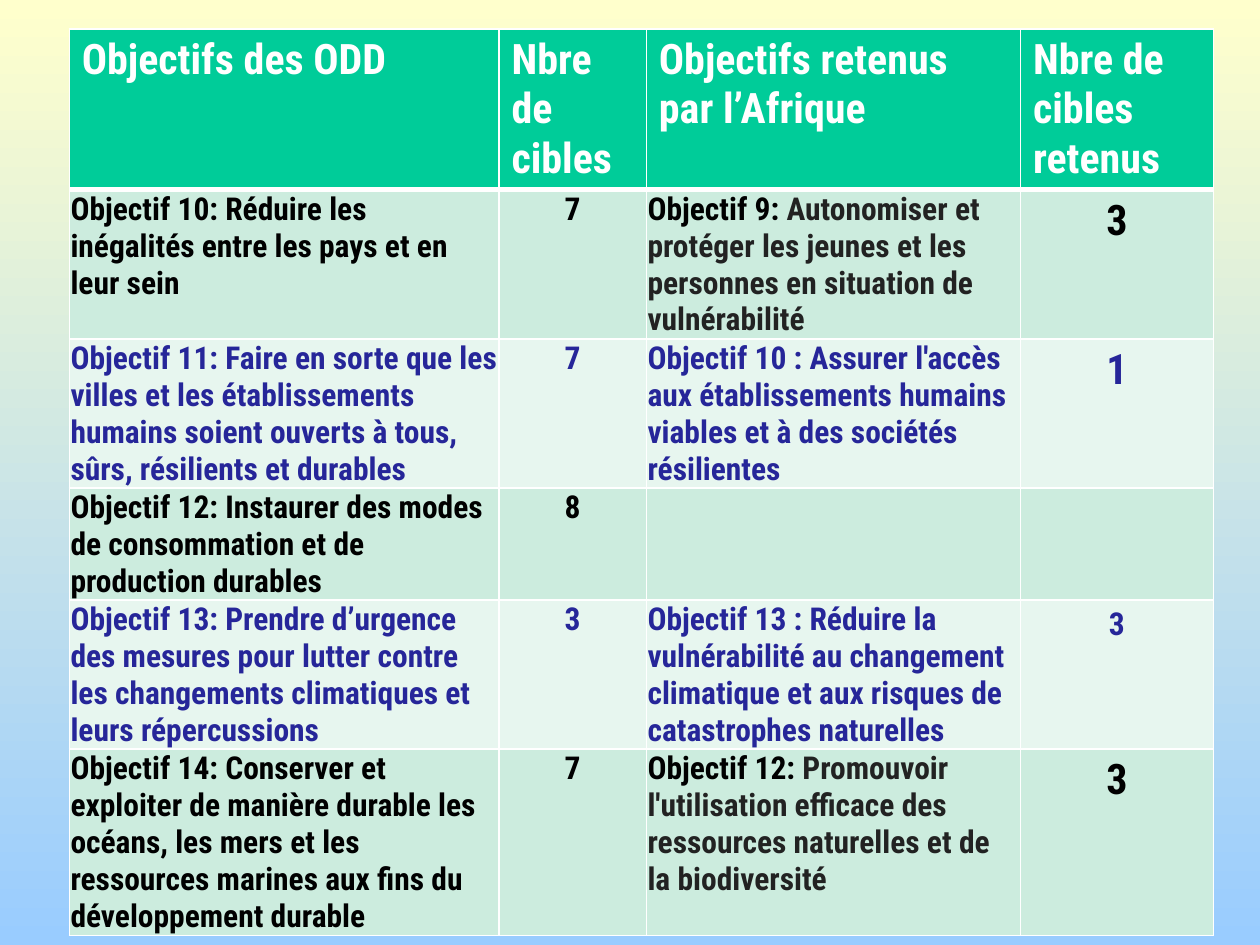
from pptx import Presentation
from pptx.dml.color import RGBColor
from pptx.enum.text import PP_ALIGN
from pptx.oxml.ns import qn
from pptx.util import Inches, Pt
from lxml.etree import SubElement

FONT = "Roboto Condensed"
WHITE, BLACK, GREY, BLUE = "FFFFFF", "000000", "222222", "262699"
HEADER_FILL, DARK_BAND, LIGHT_BAND = "00CC99", "CCECDE", "E7F6EF"
COLUMN_WIDTHS = [3.41, 1.17, 2.97, 1.53]
ROW_HEIGHT = 0.41  # minimum; rows grow with their text
THIN, THICK = 1, 3
TIGHT = {"margin_left": 0.01, "margin_top": 0.01, "margin_right": 0.01, "margin_bottom": 0}

HEADERS = ["Objectifs des ODD", "Nbre de cibles",
           "Objectifs retenus par l’Afrique", "Nbre de cibles retenus"]

# Goal, targets, (African goal label, wording), targets kept, size of the last number
GOALS = [
    ("Objectif 10: Réduire les inégalités entre les pays et en leur sein", "7",
     ("Objectif 9:", " Autonomiser et protéger les jeunes et les personnes "
      "en situation de vulnérabilité"), "3", 24),
    ("Objectif 11: Faire en sorte que les villes et les établissements humains "
     "soient ouverts à tous, sûrs, résilients et durables", "7",
     ("Objectif 10 : Assurer l'accès aux établissements humains viables "
      "et à des sociétés résilientes",), "1", 24),
    ("Objectif 12: Instaurer des modes de consommation et de production durables", "8",
     (), "", 18),
    ("Objectif 13: Prendre d’urgence des mesures pour lutter contre les changements "
     "climatiques et leurs répercussions", "3",
     ("Objectif 13 : Réduire la vulnérabilité au changement climatique et aux risques "
      "de catastrophes naturelles",), "3", 18),
    ("Objectif 14: Conserver et exploiter de manière durable les océans, les mers et les "
     "ressources marines aux fins du développement durable", "7",
     ("Objectif 12: ", "Promouvoir l'utilisation efficace des ressources naturelles "
      "et de la biodiversité"), "3", 24),
]


def rgb(color):
    return RGBColor.from_string(color)


def paint_background(slide):
    fill = slide.background.fill
    fill.gradient()
    fill.gradient_angle = 270
    for stop, color in zip(fill.gradient_stops, ("FFFFCC", "99CCFF")):
        stop.color.rgb = rgb(color)


def style_cell(cell, fill, top=THIN, bottom=THIN):
    """Give a cell white borders and a solid fill."""
    properties = cell._tc.get_or_add_tcPr()
    for side, width in {"L": THIN, "R": THIN, "T": top, "B": bottom}.items():
        line = SubElement(properties, qn(f"a:ln{side}"), w=str(Pt(width)))
        solid = SubElement(line, qn("a:solidFill"))
        SubElement(solid, qn("a:srgbClr"), val=WHITE)
    cell.fill.solid()
    cell.fill.fore_color.rgb = rgb(fill)


def write_cell(cell, runs, size, centered=False, tight=False):
    """Write (text, color) runs in a cell."""
    if tight:
        for name, value in TIGHT.items():
            setattr(cell, name, Inches(value))
    paragraph = cell.text_frame.paragraphs[0]
    if centered:
        paragraph.alignment = PP_ALIGN.CENTER
    for text, color in runs:
        run = paragraph.add_run()
        run.text = text
        for name, value in {"name": FONT, "size": Pt(size), "bold": True}.items():
            setattr(run.font, name, value)
        run.font.color.rgb = rgb(color)


def add_goals_table(slide):
    frame = slide.shapes.add_table(len(GOALS) + 1, len(HEADERS), Inches(0.55), Inches(0.23),
                                   Inches(sum(COLUMN_WIDTHS)), Inches(6.45))
    table = frame.table
    table.horz_banding = False
    for column, width in zip(table.columns, COLUMN_WIDTHS):
        column.width = Inches(width)
    for row in table.rows:
        row.height = Inches(ROW_HEIGHT)
    frame.height = Inches(6.45)
    return table


def fill_header(table):
    for cell, text in zip(table.rows[0].cells, HEADERS):
        style_cell(cell, HEADER_FILL, bottom=THICK)
        write_cell(cell, [(text, WHITE)], 24)


def fill_goal(table, index, goal):
    objective, targets, african_goal, kept, kept_size = goal
    odd = index % 2 == 1
    color = BLACK if odd else BLUE
    cells = list(table.rows[index].cells)
    for cell in cells:
        style_cell(cell, DARK_BAND if odd else LIGHT_BAND, top=THICK if index == 1 else THIN)
    write_cell(cells[0], [(objective, color)], 18, tight=True)
    write_cell(cells[1], [(targets, color)], 18, centered=True, tight=True)
    if african_goal:
        write_cell(cells[2], zip(african_goal, (color, GREY)), 18, tight=True)
        write_cell(cells[3], [(kept, color)], kept_size, centered=True)


def main():
    presentation = Presentation()
    presentation.slide_width, presentation.slide_height = Inches(10), Inches(7.5)
    slide = presentation.slides.add_slide(presentation.slide_layouts[6])
    paint_background(slide)
    table = add_goals_table(slide)
    fill_header(table)
    for index, goal in enumerate(GOALS, start=1):
        fill_goal(table, index, goal)
    presentation.save("out.pptx")


if __name__ == "__main__":
    main()
